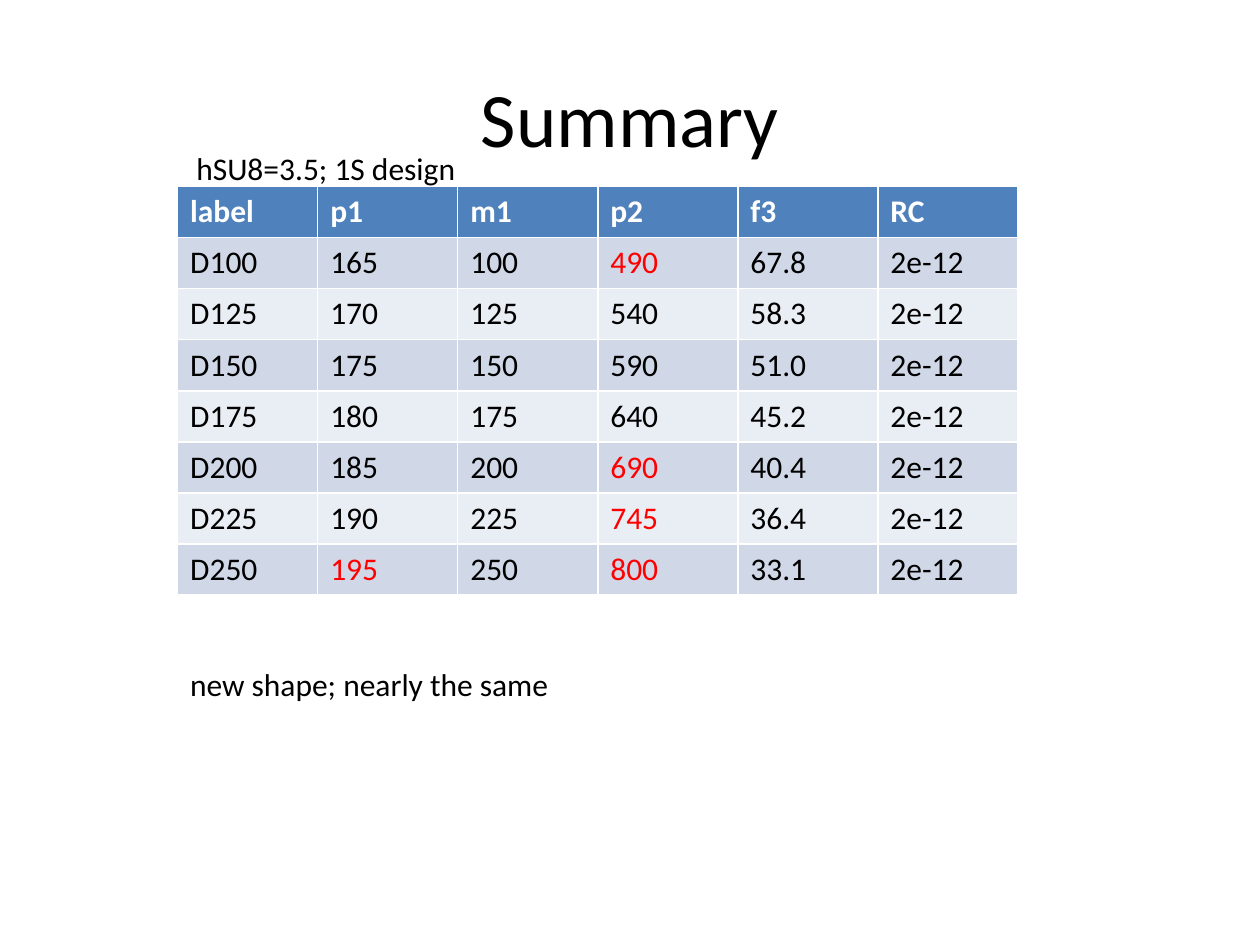
from pptx import Presentation
from pptx.dml.color import RGBColor as RGB
from pptx.enum.text import MSO_ANCHOR, MSO_AUTO_SIZE, PP_ALIGN
from pptx.util import Inches, Pt

COLORS = {"black": "000000", "white": "FFFFFF", "red": "FF0000",
          "header": "4F81BD", "odd": "D0D8E8", "even": "E9EDF4"}

HEADER = ["label", "p1", "m1", "p2", "f3", "RC"]
ROWS = [
    ["D100", "165", "100", "490", "67.8", "2e-12"],
    ["D125", "170", "125", "540", "58.3", "2e-12"],
    ["D150", "175", "150", "590", "51.0", "2e-12"],
    ["D175", "180", "175", "640", "45.2", "2e-12"],
    ["D200", "185", "200", "690", "40.4", "2e-12"],
    ["D225", "190", "225", "745", "36.4", "2e-12"],
    ["D250", "195", "250", "800", "33.1", "2e-12"],
]
HIGHLIGHTED = {("D100", "p2"), ("D200", "p2"), ("D225", "p2"),
               ("D250", "p1"), ("D250", "p2")}


def set_text(tf, text, size=18, color="black", bold=False):
    tf.text = text
    font = tf.paragraphs[0].runs[0].font
    font.name = "Calibri"
    font.size = Pt(size)
    font.bold = bold
    font.color.rgb = RGB.from_string(COLORS[color])


prs = Presentation()
prs.slide_width, prs.slide_height = Inches(10), Inches(7.5)
s = prs.slides.add_slide(prs.slide_layouts[5])

title = s.shapes.title
title.left, title.top = Inches(0.5), Inches(0.3)
title.width, title.height = Inches(9), Inches(1.25)
set_text(title.text_frame, "Summary", size=44)
title.text_frame.vertical_anchor = MSO_ANCHOR.MIDDLE
title.text_frame.paragraphs[0].alignment = PP_ALIGN.CENTER

# The default table style supplies the white cell borders
table = s.shapes.add_table(len(ROWS) + 1, len(HEADER), Inches(1.41), Inches(1.48),
                           Inches(6.67), Inches(3.24)).table
for r, values in enumerate([HEADER] + ROWS):
    is_header = r == 0
    fill = "header" if is_header else "odd" if r % 2 else "even"
    for c, value in enumerate(values):
        if is_header:
            color = "white"
        else:
            color = "red" if (values[0], HEADER[c]) in HIGHLIGHTED else "black"
        cell = table.cell(r, c)
        cell.fill.solid()
        cell.fill.fore_color.rgb = RGB.from_string(COLORS[fill])
        set_text(cell.text_frame, value, color=color, bold=is_header)

for text, left, top, width in [
    ("hSU8=3.5; 1S design", 1.46, 1.13, 2.28),
    ("new shape; nearly the same", 1.41, 5.23, 3.08),
]:
    tf = s.shapes.add_textbox(Inches(left), Inches(top), Inches(width), Inches(0.4)).text_frame
    tf.word_wrap = False
    tf.auto_size = MSO_AUTO_SIZE.SHAPE_TO_FIT_TEXT
    set_text(tf, text)

prs.save("out.pptx")
